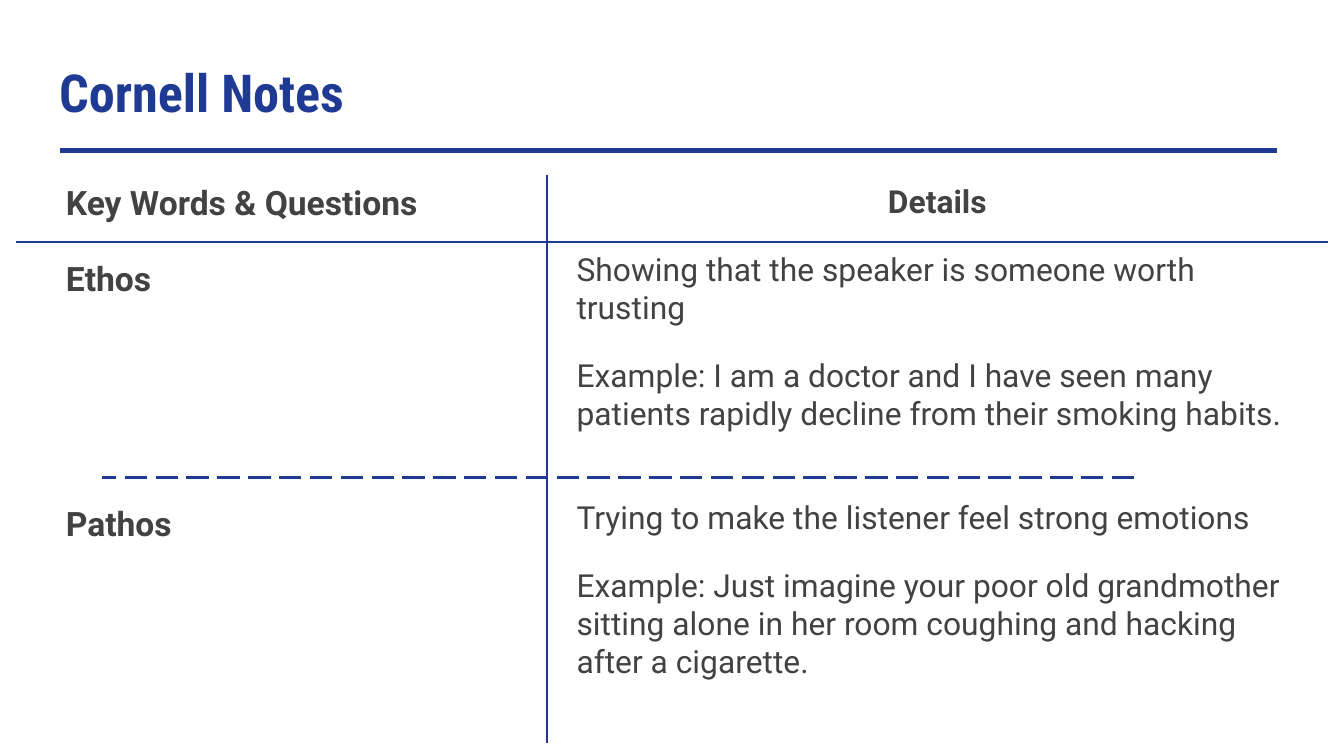
from lxml.etree import SubElement
from pptx import Presentation
from pptx.dml.color import RGBColor
from pptx.enum.dml import MSO_LINE
from pptx.enum.shapes import MSO_CONNECTOR
from pptx.enum.text import MSO_ANCHOR, MSO_AUTO_SIZE, PP_ALIGN
from pptx.oxml.ns import qn
from pptx.util import Inches, Pt

NAVY, BLUE, GRAY = "1F3A93", "1F3A92", "424242"
LEFT, CENTER = PP_ALIGN.LEFT, PP_ALIGN.CENTER

TITLE = [("Cornell Notes", True, LEFT, 1, 0)]
KEY_WORDS = [
    ("Key Words & Questions", True, LEFT, 1.15, 0),
    ("Ethos", True, LEFT, 1.15, 16),
    ("Pathos", True, LEFT, 1.15, 106),
]
DETAILS = [
    ("Details", True, CENTER, 1.15, 0),
    ("Showing that the speaker is someone worth trusting", False, LEFT, 1, 16),
    ("Example: I am a doctor and I have seen many patients rapidly decline "
     "from their smoking habits.", False, LEFT, 1, 16),
    ("Trying to make the listener feel strong emotions", False, LEFT, 1, 35.5),
    ("Example: Just imagine your poor old grandmother sitting alone in her room "
     "coughing and hacking after a cigarette.", False, LEFT, 1, 16),
]
TEXTS = [
    (0, (0.34, 0.35, 9.32, 0.63), "Roboto Condensed", 28, NAVY, TITLE),
    (1, (0.39, 1.21, 2.84, 3.98), "Roboto", 18, GRAY, KEY_WORDS),
    (2, (4.19, 1.21, 5.57, 4.23), "Roboto", 17, GRAY, DETAILS),
]
RULES = [
    ((0.45, 1.12, 9.5, 1.12), NAVY, 2.25, None),
    ((4.07, 1.3, 4.07, 5.53), BLUE, 1.5, None),
    ((9.88, 1.8, 0.12, 1.8), BLUE, 1.5, None),
    ((8.44, 3.55, 0.76, 3.55), BLUE, 1.5, MSO_LINE.LONG_DASH),
]


def color(hex_value):
    return RGBColor.from_string(hex_value)


def fill_placeholder(shape, box, font_name, size, hex_value, lines):
    shape.left, shape.top, shape.width, shape.height = map(Inches, box)
    frame = shape.text_frame
    frame.text = "\n".join(line[0] for line in lines)
    frame.word_wrap = True
    frame.auto_size = MSO_AUTO_SIZE.NONE
    frame.vertical_anchor = MSO_ANCHOR.TOP
    frame.margin_left = frame.margin_right = Inches(0.1)
    frame.margin_top = frame.margin_bottom = Inches(0.1)
    for paragraph, (_, bold, alignment, spacing, before) in zip(frame.paragraphs, lines):
        paragraph.alignment = alignment
        paragraph.line_spacing = float(spacing)
        paragraph.space_before = Pt(before)
        properties = paragraph._p.get_or_add_pPr()
        properties.set("marL", "0")
        properties.set("indent", "0")
        SubElement(properties, qn("a:buNone"))
        for run in paragraph.runs:
            run.font.name = font_name
            run.font.size = Pt(size)
            run.font.bold = bold
            run.font.color.rgb = color(hex_value)


def add_rule(slide, ends, hex_value, width, dash):
    rule = slide.shapes.add_connector(MSO_CONNECTOR.STRAIGHT, *map(Inches, ends))
    rule.line.color.rgb = color(hex_value)
    rule.line.width = Pt(width)
    if dash:
        rule.line.dash_style = dash
    SubElement(rule._element.spPr, qn("a:effectLst"))


def main():
    presentation = Presentation()
    presentation.slide_width = Inches(10)
    presentation.slide_height = Inches(10 * 9 / 16)
    slide = presentation.slides.add_slide(presentation.slide_layouts.get_by_name("Two Content"))
    for index, *content in TEXTS:
        fill_placeholder(slide.placeholders[index], *content)
    for rule in RULES:
        add_rule(slide, *rule)
    presentation.save("out.pptx")


if __name__ == "__main__":
    main()
